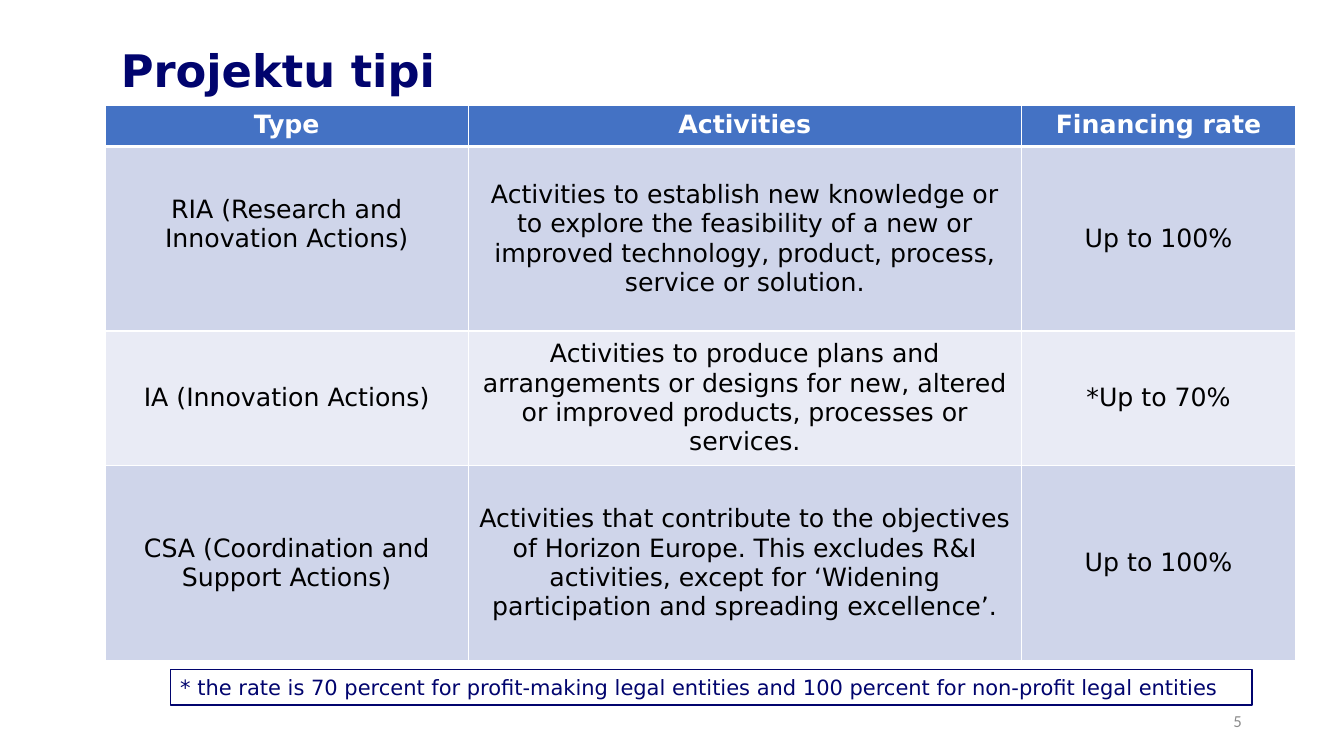
from lxml.etree import SubElement
from pptx import Presentation
from pptx.dml.color import RGBColor
from pptx.enum.shapes import MSO_SHAPE
from pptx.enum.text import MSO_ANCHOR, PP_ALIGN
from pptx.oxml.ns import qn
from pptx.util import Pt

NAVY, WHITE, BLACK, GRAY = "01046E", "FFFFFF", "000000", "8C8C8C"
BLUE, BANDS = "4472C4", ("E9EBF5", "CFD5EA")
ROWS = [
    ("Type", "Activities", "Financing rate"),
    ("RIA (Research and Innovation Actions)",
     "Activities to establish new knowledge or to explore the feasibility of "
     "a new or improved technology, product, process, service or solution.",
     "Up to 100%"),
    ("IA (Innovation Actions)",
     "Activities to produce plans and arrangements or designs for new, "
     "altered or improved products, processes or services.",
     "*Up to 70%"),
    ("CSA (Coordination and Support Actions)",
     "Activities that contribute to the objectives of Horizon Europe. This "
     "excludes R&I activities, except for ‘Widening participation and "
     "spreading excellence’.",
     "Up to 100%"),
]
WIDTHS = (259.2, 395.3, 195.8)
HEIGHTS = (29.5, 131.8, 95.8, 139.7)


def paint(text):
    return RGBColor.from_string(text)


class Deck:
    """Hold the text style and the current slide."""

    def __init__(self, slide, font):
        self.slide, self.font = slide, font

    def words(self, frame, text, size, color, bold=False,
              align=PP_ALIGN.LEFT, font=None):
        frame.word_wrap = True
        line = frame.paragraphs[0]
        line.alignment = align
        run = line.add_run()
        run.text = text
        run.font.name = font or self.font
        run.font.size = Pt(size)
        run.font.bold = bold
        run.font.color.rgb = paint(color)

    def label(self, area, *args, **style):
        box = self.slide.shapes.add_textbox(*map(Pt, area))
        box.text_frame.vertical_anchor = MSO_ANCHOR.MIDDLE
        self.words(box.text_frame, *args, **style)
        return box

    def note(self, area, text, size, color):
        box = self.slide.shapes.add_shape(MSO_SHAPE.RECTANGLE, *map(Pt, area))
        box.shadow.inherit = False
        box.fill.background()
        box.line.color.rgb = paint(color)
        box.line.width = Pt(1)
        box.text_frame.vertical_anchor = MSO_ANCHOR.TOP
        self.words(box.text_frame, text, size, color)

    def edge(self, cell, side, width):
        props = cell._tc.get_or_add_tcPr()
        line = SubElement(props, qn("a:" + side), w=str(Pt(width)))
        fill = SubElement(line, qn("a:solidFill"))
        SubElement(fill, qn("a:srgbClr"), val=WHITE)

    def cell(self, cell, text, row):
        head = row == 0
        for side in ("lnL", "lnR", "lnT", "lnB"):
            thick = (row, side) in ((0, "lnB"), (1, "lnT"))
            self.edge(cell, side, 3 if thick else 1)
        cell.fill.solid()
        cell.fill.fore_color.rgb = paint(BLUE if head else BANDS[row % 2])
        cell.vertical_anchor = MSO_ANCHOR.TOP if head else MSO_ANCHOR.MIDDLE
        self.words(cell.text_frame, text, 18, WHITE if head else BLACK,
                   bold=head, align=PP_ALIGN.CENTER)

    def table(self, left, top, rows, widths, heights):
        area = map(Pt, (left, top, sum(widths), sum(heights)))
        table = self.slide.shapes.add_table(
            len(rows), len(widths), *area).table
        for col, width in zip(table.columns, widths):
            col.width = Pt(width)
        for r, (texts, height) in enumerate(zip(rows, heights)):
            table.rows[r].height = Pt(height)
            for c, text in enumerate(texts):
                self.cell(table.cell(r, c), text, r)
        return table


def main():
    show = Presentation()
    show.slide_width, show.slide_height = Pt(960), Pt(540)
    slide = show.slides.add_slide(show.slide_layouts[6])
    deck = Deck(slide, "DejaVu Sans")
    title = deck.label((79.2, 0, 828, 104.4), "Projektu tipi", 32, NAVY,
                       bold=True)
    title.text_frame.paragraphs[0].line_spacing = 0.9
    deck.label((678.2, 500.4, 216, 28.8), "5", 12, GRAY,
               align=PP_ALIGN.RIGHT, font="Calibri")
    table = deck.table(75.2, 75.2, ROWS, WIDTHS, HEIGHTS)
    table.cell(1, 0).margin_bottom = Pt(24.6)
    deck.note((121.7, 478.4, 772.6, 25.2),
              "* the rate is 70 percent for profit-making legal entities and "
              "100 percent for non-profit legal entities", 15, NAVY)
    show.save("out.pptx")


if __name__ == "__main__":
    main()
